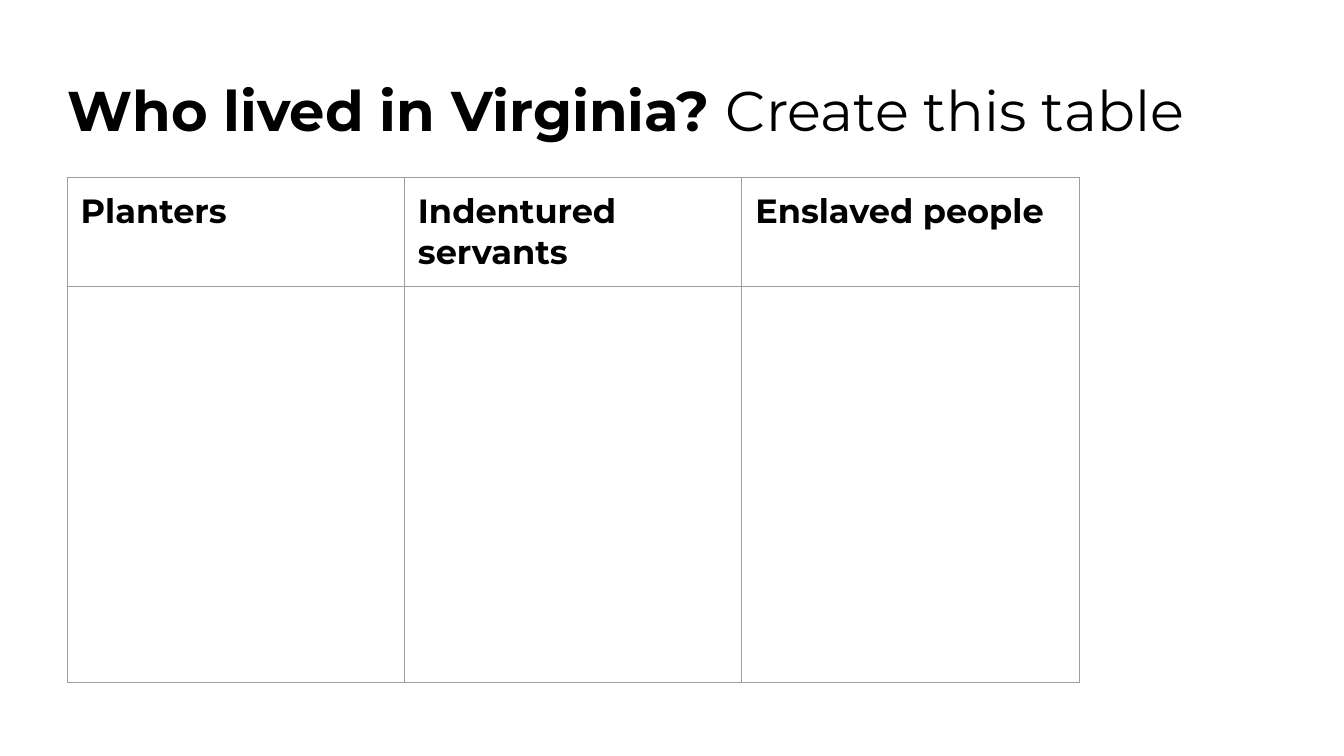
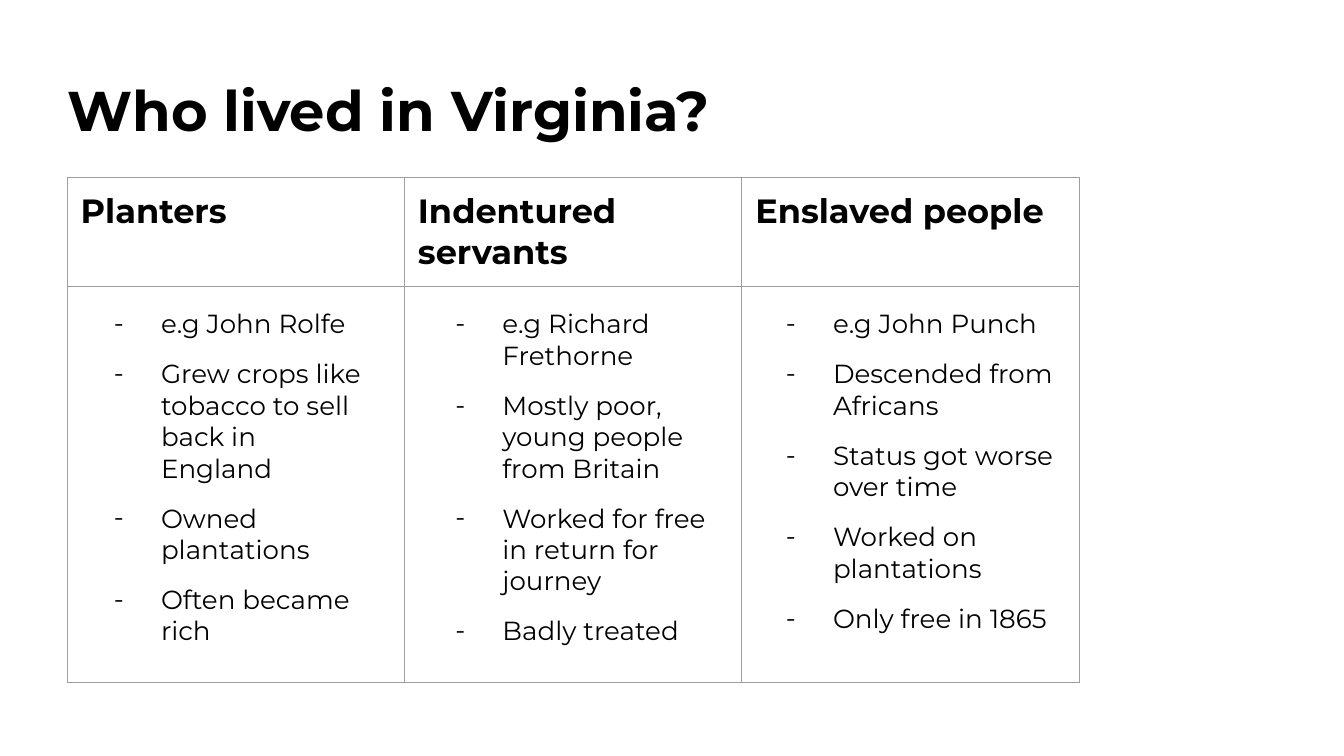
from dataclasses import dataclass

from lxml import etree
from pptx import Presentation
from pptx.dml.color import RGBColor
from pptx.enum.text import MSO_ANCHOR
from pptx.oxml.ns import qn
from pptx.util import Inches, Pt

TOP = MSO_ANCHOR.TOP

FONT = "Montserrat"
BLACK, GREY = "000000", "9E9E9E"

# Grid, in inches, on a 16:9 slide
SLIDE_W = 10
SLIDE_H = SLIDE_W * 9 / 16
LEFT, TITLE_TOP, TITLE_H = 0.5, 0.49, 0.89
TABLE_TOP, COL_W = 1.32, 2.51
ROWS = (0.81, 2.95)
NOTES_TOP, NOTES_H = TABLE_TOP + ROWS[0] + 0.06, 2.74
PAD = 0.1


@dataclass(frozen=True)
class Group:
    """One column of the table: its heading and its notes."""
    heading: str
    inset: float
    width: float
    notes: tuple[str, ...]


QUESTION = "Who lived in Virginia?"
TASK = "Create this table"
GROUPS = (
    Group("Planters", 0.1, 2.26, (
        "e.g John Rolfe",
        "Grew crops like tobacco to sell back in England",
        "Owned plantations",
        "Often became rich",
    )),
    Group("Indentured servants", 0.13, 2.26, (
        "e.g Richard Frethorne",
        "Mostly poor, young people from Britain",
        "Worked for free in return for journey",
        "Badly treated",
    )),
    Group("Enslaved people", 0.08, 2.36, (
        "e.g John Punch",
        "Descended from Africans",
        "Status got worse over time",
        "Worked on plantations",
        "Only free in 1865",
    )),
)


def color(value: str) -> RGBColor:
    return RGBColor.from_string(value)


def set_font(font, size: float, bold: bool | None = None) -> None:
    font.name, font.size, font.bold = FONT, Pt(size), bold
    font.color.rgb = color(BLACK)


def add_text_box(s, x: float, y: float, w: float, h: float, pad: float):
    tf = s.shapes.add_textbox(*map(Inches, (x, y, w, h))).text_frame
    tf.word_wrap, tf.vertical_anchor = True, TOP
    tf.margin_left = tf.margin_right = Inches(pad)
    tf.margin_top = tf.margin_bottom = Inches(pad)
    return tf


def add_title(s, width: float, task: str = "") -> None:
    p = add_text_box(s, LEFT, TITLE_TOP, width, TITLE_H, 0).paragraphs[0]
    p.line_spacing = 1.15
    set_font(p.font, 30)
    question = f"{QUESTION} " if task else QUESTION
    for text, bold in ((question, True), (task, False)):
        if text:
            r = p.add_run()
            r.text, r.font.bold = text, bold


def add_borders(cell) -> None:
    tc_pr = cell._tc.get_or_add_tcPr()
    for side in ("a:lnL", "a:lnR", "a:lnT", "a:lnB"):
        ln = etree.SubElement(tc_pr, qn(side), w=str(Pt(0.75)))
        fill = etree.SubElement(ln, qn("a:solidFill"))
        etree.SubElement(fill, qn("a:srgbClr"), val=GREY)


def add_group_table(s) -> None:
    size = (COL_W * len(GROUPS), sum(ROWS))
    table = s.shapes.add_table(len(ROWS), len(GROUPS),
                               *map(Inches, (LEFT, TABLE_TOP, *size))).table
    table.first_row = table.horz_banding = False
    for col in table.columns:
        col.width = Inches(COL_W)
    for row, height in zip(table.rows, ROWS):
        row.height = Inches(height)
    for cell in table.iter_cells():
        cell.margin_left = cell.margin_right = Inches(PAD)
        cell.margin_top = cell.margin_bottom = Inches(PAD)
        add_borders(cell)
        cell.fill.background()
    for i, group in enumerate(GROUPS):
        p = table.cell(0, i).text_frame.paragraphs[0]
        p.text = group.heading
        set_font(p.font, 18, True)


def add_dash(p) -> None:
    p_pr = p._p.get_or_add_pPr()
    p_pr.set("marL", str(Inches(0.5)))
    p_pr.set("indent", str(Inches(-0.35)))
    bu_clr = etree.SubElement(p_pr, qn("a:buClr"))
    etree.SubElement(bu_clr, qn("a:srgbClr"), val=BLACK)
    etree.SubElement(p_pr, qn("a:buFont"), typeface=FONT)
    etree.SubElement(p_pr, qn("a:buChar"), char="-")


def add_notes(s) -> None:
    for i, group in enumerate(GROUPS):
        x = LEFT + i * COL_W + group.inset
        tf = add_text_box(s, x, NOTES_TOP, group.width, NOTES_H, PAD)
        for j, note in enumerate(group.notes):
            p = tf.add_paragraph() if j else tf.paragraphs[0]
            p.text = note
            add_dash(p)
            if j:
                p.space_before = Pt(10)
            set_font(p.font, 14)


def main() -> None:
    prs = Presentation()
    prs.slide_width, prs.slide_height = Inches(SLIDE_W), Inches(SLIDE_H)
    blank = prs.slide_layouts[6]

    # Table to copy and fill in
    s = prs.slides.add_slide(blank)
    add_title(s, 9.31, TASK)
    add_group_table(s)

    # Completed table
    s = prs.slides.add_slide(blank)
    add_title(s, 7.85)
    add_group_table(s)
    add_notes(s)

    prs.save("out.pptx")


if __name__ == "__main__":
    main()
